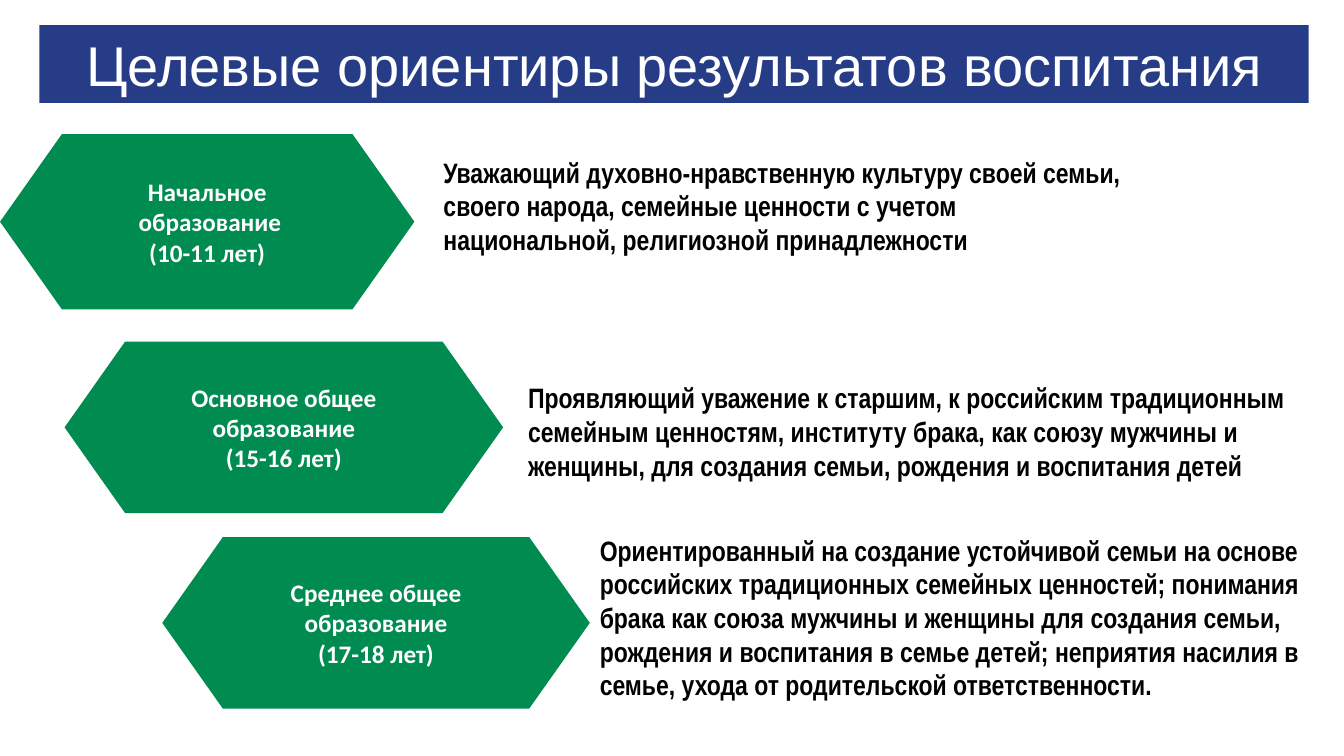
"""Build the slide on target results of upbringing by education level."""
import pptx
import pptx.dml.color
import pptx.enum.shapes
import pptx.enum.text
import pptx.util

Inches = pptx.util.Inches
Pt = pptx.util.Pt
RGBColor = pptx.dml.color.RGBColor
PP_ALIGN = pptx.enum.text.PP_ALIGN
MSO_ANCHOR = pptx.enum.text.MSO_ANCHOR

BLUE = RGBColor(0x26, 0x3C, 0x86)
GREEN = RGBColor(0x00, 0x8B, 0x50)
WHITE = RGBColor(0xFF, 0xFF, 0xFF)
BLACK = RGBColor(0x00, 0x00, 0x00)

LEVELS = [
    ("Начальное\n образование\n(10-11 лет)", (0, 1.33, 4.11, 1.74),
     "Уважающий духовно-нравственную культуру своей семьи, своего народа, "
     "семейные ценности с учетом национальной, религиозной принадлежности",
     (4.3, 1.49, 7.05, 1.11)),
    ("Основное общее образование\n(15-16 лет)", (0.64, 3.39, 4.35, 1.7),
     "Проявляющий уважение к старшим, к российским традиционным семейным "
     "ценностям, институту брака, как союзу мужчины и женщины, для создания "
     "семьи, рождения и воспитания детей",
     (5.14, 3.73, 7.97, 1.11)),
    ("Среднее общее образование\n(17-18 лет)", (1.61, 5.33, 4.24, 1.7),
     "Ориентированный на создание устойчивой семьи на основе российских "
     "традиционных семейных ценностей; понимания брака как союза мужчины и "
     "женщины для создания семьи, рождения и воспитания в семье детей; "
     "неприятия насилия в семье, ухода от родительской ответственности.",
     (5.85, 5.24, 7.48, 1.78)),
]


class SlideBuilder:
    def __init__(self, slide):
        self.slide = slide

    def set_text(self, shape, text, font_name, size, color, bold, alignment, anchor):
        frame = shape.text_frame
        frame.text = text
        frame.word_wrap = True
        frame.auto_size = pptx.enum.text.MSO_AUTO_SIZE.NONE
        frame.vertical_anchor = anchor
        for paragraph in frame.paragraphs:
            paragraph.alignment = alignment
            for run in paragraph.runs:
                run.font.name = font_name
                run.font.size = Pt(size)
                run.font.bold = bold
                run.font.color.rgb = color

    def title(self, text, box):
        shape = self.slide.shapes.title
        shape.left, shape.top, shape.width, shape.height = map(Inches, box)
        shape.fill.solid()
        shape.fill.fore_color.rgb = BLUE
        self.set_text(shape, text, "Arial", 40, WHITE, False,
                      PP_ALIGN.CENTER, MSO_ANCHOR.TOP)

    def hexagon(self, text, box):
        shape = self.slide.shapes.add_shape(
            pptx.enum.shapes.MSO_SHAPE.HEXAGON, *map(Inches, box))
        shape.adjustments[0] = 0.353
        shape.shadow.inherit = False
        shape.fill.solid()
        shape.fill.fore_color.rgb = GREEN
        shape.line.fill.background()
        self.set_text(shape, text, "Calibri", 18, WHITE, True,
                      PP_ALIGN.CENTER, MSO_ANCHOR.MIDDLE)

    def description(self, text, box):
        shape = self.slide.shapes.add_textbox(*map(Inches, box))
        self.set_text(shape, text, "Arial Narrow", 20, BLACK, True,
                      PP_ALIGN.LEFT, MSO_ANCHOR.TOP)


def main():
    presentation = pptx.Presentation()
    presentation.slide_width = Inches(13.33)
    presentation.slide_height = Inches(7.5)
    slide = presentation.slides.add_slide(presentation.slide_layouts[5])
    builder = SlideBuilder(slide)
    builder.title("Целевые ориентиры результатов воспитания",
                  (0.39, 0.25, 12.59, 0.77))
    for level, level_box, result, result_box in LEVELS:
        builder.hexagon(level, level_box)
        builder.description(result, result_box)
    presentation.save("out.pptx")


if __name__ == "__main__":
    main()
